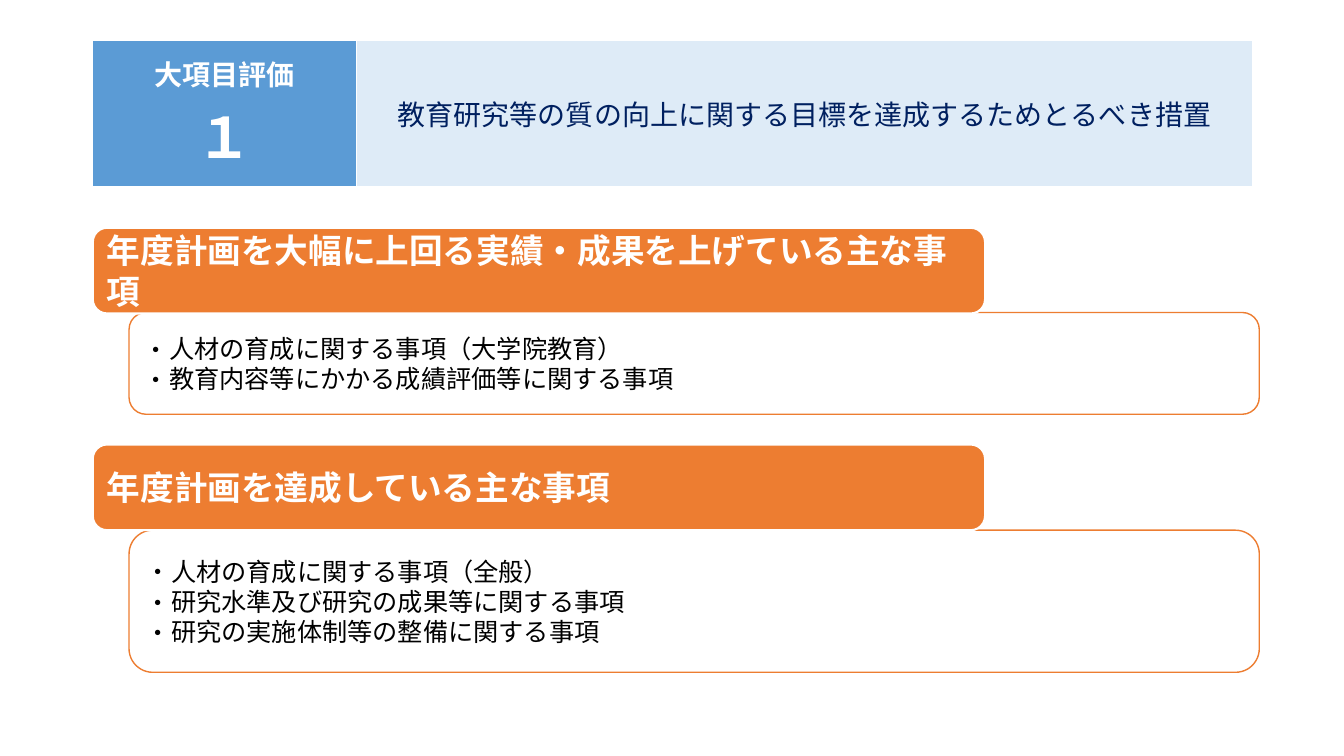
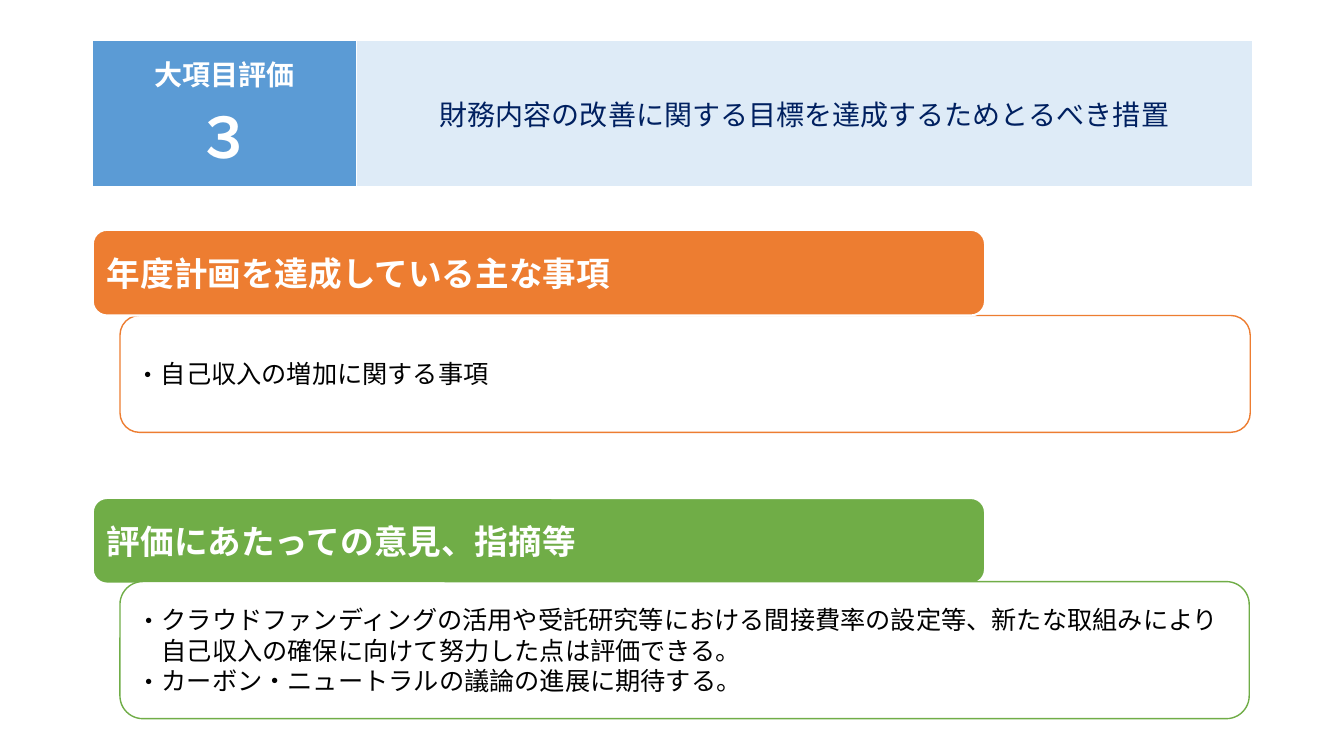
from dataclasses import dataclass

from lxml.etree import SubElement
from pptx import Presentation
from pptx.dml.color import RGBColor as RGB
from pptx.enum.shapes import MSO_SHAPE as Shape
from pptx.enum.text import MSO_ANCHOR as Anchor, PP_ALIGN as Align
from pptx.oxml.ns import qn
from pptx.util import Inches, Pt


@dataclass(frozen=True)
class Theme:
    white: RGB = RGB.from_string("FFFFFF")
    black: RGB = RGB.from_string("000000")
    navy: RGB = RGB.from_string("002060")
    blue: RGB = RGB.from_string("5B9BD5")
    pale_blue: RGB = RGB.from_string("DEEBF7")
    orange: RGB = RGB.from_string("ED7D31")
    green: RGB = RGB.from_string("70AD47")
    band_font: str = "Calibri"
    body_font: str = "Noto Sans CJK JP"
    number_size: int = 40
    heading_size: int = 24
    band_size: int = 20
    item_size: int = 18


theme = Theme()
LEFT = 0.92
HEADING_WIDTH, HEADING_HEIGHT = 8.85, 0.85
BAND_COLUMNS, BAND_HEIGHT = (2.62, 8.88), 1.45
ITEM_INDENT = Pt(theme.item_size)  # one full-width character


def add_text(paragraph, text, size, color, bold=False, font=theme.body_font):
    run = paragraph.add_run()
    run.text = text
    run.font.name, run.font.size, run.font.bold = font, Pt(size), bold
    run.font.color.rgb = color
    SubElement(run.font._element, qn("a:ea")).set("typeface", theme.body_font)


def add_panel(slide, box, fill, line, line_width):
    """Add a rounded box and return its empty, left-aligned text frame."""
    panel = slide.shapes.add_shape(Shape.ROUNDED_RECTANGLE, *map(Inches, box))
    panel.shadow.inherit = False
    panel.fill.solid()
    panel.fill.fore_color.rgb = fill
    panel.line.color.rgb = line
    panel.line.width = Pt(line_width)
    frame = panel.text_frame
    frame.word_wrap = True
    frame.vertical_anchor = Anchor.MIDDLE
    frame.paragraphs[0].alignment = Align.LEFT
    return frame


# Section: heading, colour, heading top, items box, items in front, items
evaluations = [
    ("１", "教育研究等の質の向上に関する目標を達成するためとるべき措置", [
        ("年度計画を大幅に上回る実績・成果を上げている主な事項", theme.orange,
         2.26, (1.28, 3.1, 11.21, 1.01), False,
         ["人材の育成に関する事項（大学院教育）",
          "教育内容等にかかる成績評価等に関する事項"]),
        ("年度計画を達成している主な事項", theme.orange,
         4.41, (1.28, 5.26, 11.21, 1.41), False,
         ["人材の育成に関する事項（全般）",
          "研究水準及び研究の成果等に関する事項",
          "研究の実施体制等の整備に関する事項"]),
    ]),
    ("３", "財務内容の改善に関する目標を達成するためとるべき措置", [
        ("年度計画を達成している主な事項", theme.orange,
         2.28, (1.19, 3.13, 11.21, 1.16), False,
         ["自己収入の増加に関する事項"]),
        ("評価にあたっての意見、指摘等", theme.green,
         4.94, (1.19, 5.77, 11.2, 1.36), True,
         ["クラウドファンディングの活用や受託研究等における間接費率の設定等、"
          "新たな取組みにより自己収入の確保に向けて努力した点は評価できる。",
          "カーボン・ニュートラルの議論の進展に期待する。"]),
    ]),
]

prs = Presentation()
prs.slide_width, prs.slide_height = Inches(13.33), Inches(7.5)
blank_layout = prs.slide_layouts[6]

for number, goal, sections in evaluations:
    slide = prs.slides.add_slide(blank_layout)

    band = slide.shapes.add_table(
        1, 2, Inches(LEFT), Inches(0.4),
        Inches(sum(BAND_COLUMNS)), Inches(BAND_HEIGHT)).table
    band_cells = [
        (theme.blue, theme.white, True,
         [("大項目評価", theme.band_size), (number, theme.number_size)]),
        (theme.pale_blue, theme.navy, False, [(goal, theme.band_size)]),
    ]
    for column, (fill, color, bold, lines) in enumerate(band_cells):
        band.columns[column].width = Inches(BAND_COLUMNS[column])
        cell = band.cell(0, column)
        cell.fill.solid()
        cell.fill.fore_color.rgb = fill
        cell.vertical_anchor = Anchor.MIDDLE
        cell.margin_left = cell.margin_right = Inches(0.04)
        cell.margin_top = cell.margin_bottom = 0
        for i, (text, size) in enumerate(lines):
            frame = cell.text_frame
            paragraph = frame.add_paragraph() if i else frame.paragraphs[0]
            paragraph.alignment = Align.CENTER
            add_text(paragraph, text, size, color, bold, theme.band_font)

    for heading, color, heading_top, items_box, items_in_front, items in sections:
        heading_box = (LEFT, heading_top, HEADING_WIDTH, HEADING_HEIGHT)
        heading_panel = (heading_box, color, theme.white, 1.5)
        items_panel = (items_box, theme.white, color, 1)
        if items_in_front:
            heading_frame = add_panel(slide, *heading_panel)
            items_frame = add_panel(slide, *items_panel)
        else:
            items_frame = add_panel(slide, *items_panel)
            heading_frame = add_panel(slide, *heading_panel)

        add_text(heading_frame.paragraphs[0], heading,
                 theme.heading_size, theme.white, bold=True)
        for i, item in enumerate(items):
            paragraph = items_frame.add_paragraph() if i else items_frame.paragraphs[0]
            paragraph.alignment = Align.LEFT
            properties = paragraph._p.get_or_add_pPr()
            properties.set("marL", str(ITEM_INDENT))
            properties.set("indent", str(-ITEM_INDENT))
            SubElement(properties, qn("a:buFont")).set("typeface", theme.body_font)
            SubElement(properties, qn("a:buChar")).set("char", "・")
            add_text(paragraph, item, theme.item_size, theme.black)

prs.save("out.pptx")
